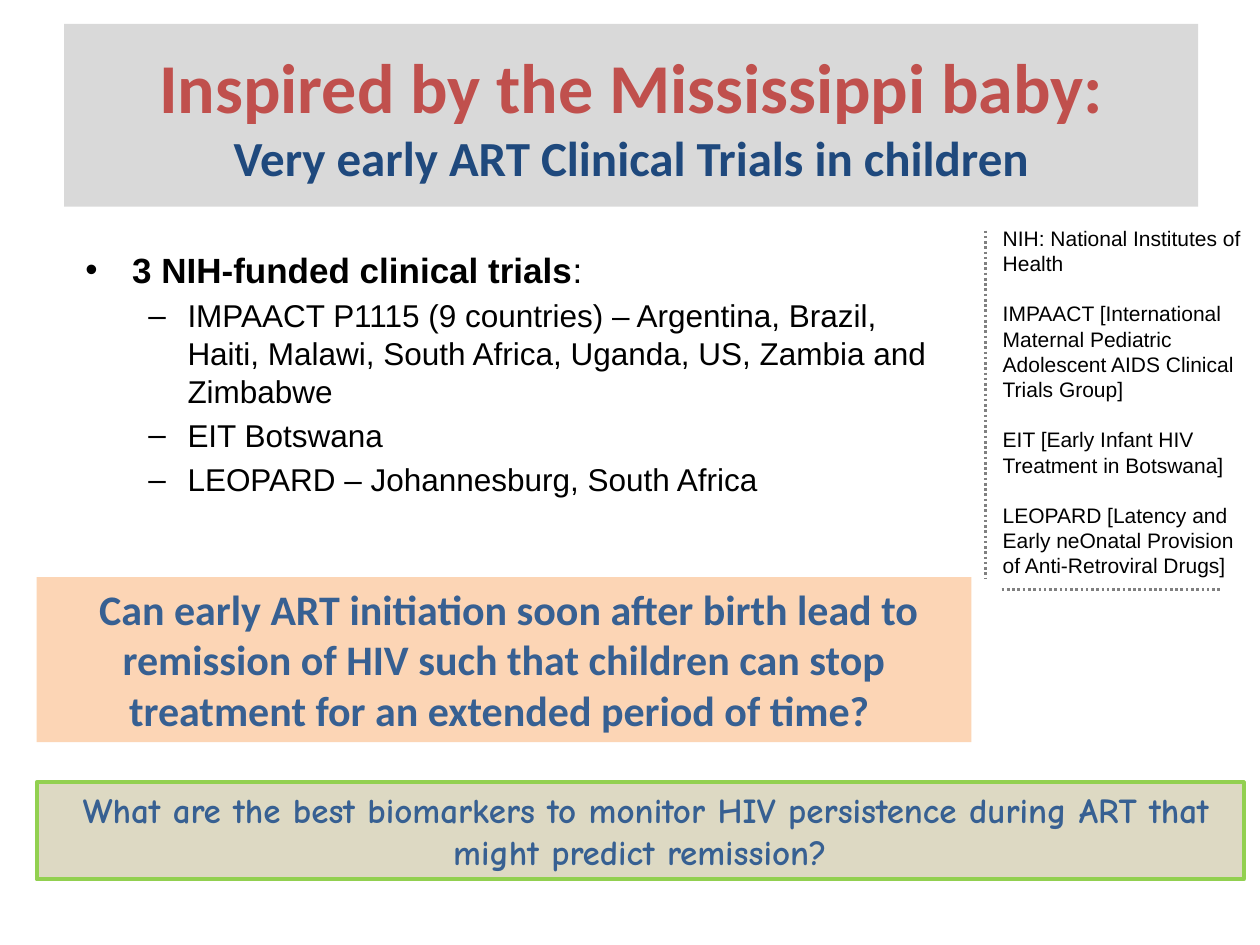
from dataclasses import dataclass
from typing import Optional

from lxml import etree
from pptx import Presentation
from pptx import util as u
from pptx.dml.color import RGBColor
from pptx.enum import dml, shapes, text
from pptx.oxml.ns import qn

BLACK, RED, NAVY, BLUE, GREY = "000000", "C0504D", "1F497D", "376092", "808080"


@dataclass
class Panel:
    left: float
    top: float
    width: float
    height: float
    fill: Optional[str] = None
    line: Optional[str] = None
    anchor: text.MSO_ANCHOR = text.MSO_ANCHOR.TOP


@dataclass
class Bullet:
    symbol: str
    margin: float
    indent: float


@dataclass
class Rule:
    start: tuple[float, float]
    end: tuple[float, float]


def color(value: str) -> RGBColor:
    return RGBColor.from_string(value)


def draw_panel(slide, panel: Panel):
    """Draw a rectangle, or a plain text box if it has no fill."""
    box = [u.Inches(n) for n in (panel.left, panel.top, panel.width, panel.height)]
    if panel.fill:
        shape = slide.shapes.add_shape(shapes.MSO_SHAPE.RECTANGLE, *box)
        shape.shadow.inherit = False
        shape.fill.solid()
        shape.fill.fore_color.rgb = color(panel.fill)
        if panel.line:
            shape.line.color.rgb = color(panel.line)
            shape.line.width = u.Pt(2.25)
        else:
            shape.line.fill.background()
    else:
        shape = slide.shapes.add_textbox(*box)
    shape.text_frame.word_wrap = True
    shape.text_frame.vertical_anchor = panel.anchor
    return shape.text_frame


def add_paragraph(frame, align=text.PP_ALIGN.LEFT, before=0.0,
                  bullet: Optional[Bullet] = None):
    """Use the first empty paragraph, or append a new one."""
    first = frame.paragraphs[0]
    paragraph = frame.add_paragraph() if first.runs else first
    paragraph.alignment = align
    paragraph.space_before = u.Pt(before)
    if bullet:
        properties = paragraph._p.get_or_add_pPr()
        properties.set("marL", str(u.Inches(bullet.margin)))
        properties.set("indent", str(u.Inches(bullet.indent)))
        etree.SubElement(properties, qn("a:buFont"), typeface="Arial")
        etree.SubElement(properties, qn("a:buChar"), char=bullet.symbol)
    return paragraph


def write(paragraph, words: str, size=18, font="Arial", ink=BLACK, bold=False):
    run = paragraph.add_run()
    run.text = words
    run.font.size = u.Pt(size)
    run.font.name = font
    run.font.bold = bold
    run.font.color.rgb = color(ink)


def draw_rule(slide, rule: Rule):
    ends = [u.Inches(n) for n in (*rule.start, *rule.end)]
    connector = slide.shapes.add_connector(shapes.MSO_CONNECTOR.STRAIGHT, *ends)
    connector.line.color.rgb = color(GREY)
    connector.line.width = u.Pt(1.5)
    connector.line.dash_style = dml.MSO_LINE.ROUND_DOT
    etree.SubElement(connector._element.spPr, qn("a:effectLst"))


def main():
    presentation = Presentation()
    presentation.slide_width = u.Inches(10)
    presentation.slide_height = u.Inches(7.5)
    slide = presentation.slides.add_slide(presentation.slide_layouts[6])
    center = text.PP_ALIGN.CENTER

    # Title
    frame = draw_panel(slide, Panel(0.51, 0.19, 9, 1.45, "D9D9D9",
                                    anchor=text.MSO_ANCHOR.MIDDLE))
    title = add_paragraph(frame, center)
    write(title, "Inspired by the Mississippi baby:", size=40, font="Calibri",
          ink=RED, bold=True)
    title.add_line_break()
    write(title, "Very early ART Clinical Trials in children", size=28,
          font="Calibri", ink=NAVY, bold=True)

    # Trials
    frame = draw_panel(slide, Panel(0.58, 1.92, 7.08, 2.39))
    heading = add_paragraph(frame, before=4, bullet=Bullet("•", 0.37, -0.37))
    write(heading, "3 NIH-funded clinical trials", size=20, bold=True)
    write(heading, ":", size=20)
    trials = (
        "IMPAACT P1115 (9 countries) – Argentina, Brazil, Haiti, Malawi, "
        "South Africa, Uganda, US, Zambia and Zimbabwe",
        "EIT Botswana",
        "LEOPARD – Johannesburg, South Africa",
    )
    for trial in trials:
        write(add_paragraph(frame, before=3.6, bullet=Bullet("–", 0.81, -0.31)),
              trial)

    # Questions
    frame = draw_panel(slide, Panel(0.29, 6.21, 9.58, 0.77, "DDD9C3", "92D050"))
    write(add_paragraph(frame, center),
          " What are the best biomarkers to monitor HIV persistence during ART "
          "that might predict remission?",
          size=20, font="Comic Neue", ink=BLUE, bold=True)
    frame = draw_panel(slide, Panel(0.29, 4.58, 7.42, 1.31, "FCD5B5"))
    write(add_paragraph(frame, center),
          " Can early ART initiation soon after birth lead to remission of HIV "
          "such that children can stop treatment for an extended period of time? ",
          size=24, font="Calibri", ink=BLUE, bold=True)

    # Abbreviations, one line apart
    frame = draw_panel(slide, Panel(7.86, 1.74, 2.11, 2.93))
    abbreviations = (
        "NIH: National Institutes of Health",
        "IMPAACT [International Maternal Pediatric Adolescent AIDS Clinical "
        "Trials Group]",
        "EIT [Early Infant HIV Treatment in Botswana]",
        "LEOPARD [Latency and Early neOnatal Provision of Anti-Retroviral Drugs]",
    )
    for index, abbreviation in enumerate(abbreviations):
        write(add_paragraph(frame, before=14.4 if index else 0),
              abbreviation, size=12)

    # Dotted rules
    for rule in (Rule((7.82, 1.83), (7.82, 4.59)), Rule((7.95, 4.68), (9.68, 4.68))):
        draw_rule(slide, rule)

    presentation.save("out.pptx")


if __name__ == "__main__":
    main()
